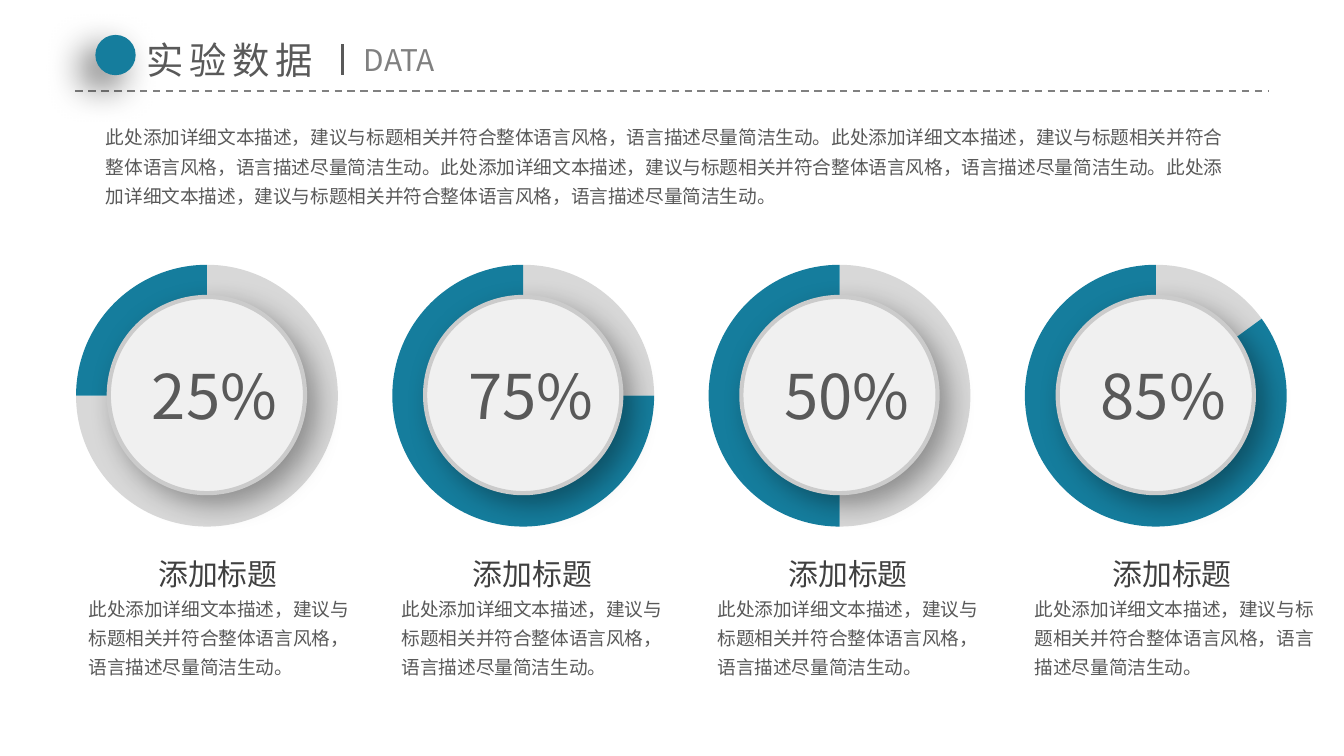
from lxml import etree
from pptx import Presentation
from pptx import util as u
from pptx.chart.data import CategoryChartData
from pptx.dml.color import RGBColor
from pptx.enum import chart as charts, dml, shapes, text
from pptx.oxml import parse_xml
from pptx.oxml.ns import nsdecls, qn

Inches, Pt = u.Inches, u.Pt
SENTENCE = "此处添加详细文本描述，建议与标题相关并符合整体语言风格，语言描述尽量简洁生动。"


def rgb(value):
    return RGBColor.from_string(value)


class Deck:
    font = "Noto Sans CJK SC"
    accent, track = "157D9D", "D8D8D8"
    heading, body, muted = "404040", "595959", "808080"

    def __init__(self, width, height):
        self.prs = Presentation()
        self.prs.slide_width, self.prs.slide_height = Inches(width), Inches(height)
        self.slide = self.prs.slides.add_slide(self.prs.slide_layouts[6])

    def line(self, x1, y1, x2, y2, color, weight, dash=None):
        rule = self.slide.shapes.add_connector(
            shapes.MSO_CONNECTOR.STRAIGHT, *map(Inches, (x1, y1, x2, y2)))
        rule.line.color.rgb = rgb(color)
        rule.line.width = Pt(weight)
        if dash:
            rule.line.dash_style = dash
        etree.SubElement(rule._element.spPr, qn("a:effectLst"))

    def circle(self, x, y, size, shadow):
        """Borderless disc; shadow is (opacity %, blur pt, distance pt, degrees)."""
        disc = self.slide.shapes.add_shape(
            shapes.MSO_SHAPE.OVAL, *map(Inches, (x, y, size, size)))
        disc.fill.solid()
        disc.fill.fore_color.rgb = rgb(self.accent)
        disc.line.fill.background()
        disc.shadow.inherit = False
        alpha, blur, distance, angle = shadow
        disc._element.spPr.find(qn("a:effectLst")).append(parse_xml(
            f'<a:outerShdw {nsdecls("a")} blurRad="{Pt(blur)}" dist="{Pt(distance)}" '
            f'dir="{angle * 60000}" algn="ctr" rotWithShape="0"><a:srgbClr val="000000">'
            f'<a:alpha val="{alpha * 1000}"/></a:srgbClr></a:outerShdw>'))
        return disc

    def text(self, x, y, w, h, words, size, color, wrap=True,
             inset=(0.1, 0.05), leading=None, spacing=None):
        box = self.slide.shapes.add_textbox(*map(Inches, (x, y, w, h)))
        frame = box.text_frame
        frame.word_wrap = wrap
        frame.auto_size = text.MSO_AUTO_SIZE.SHAPE_TO_FIT_TEXT
        frame.margin_left = frame.margin_right = Inches(inset[0])
        frame.margin_top = frame.margin_bottom = Inches(inset[1])
        paragraph = frame.paragraphs[0]
        paragraph.text = words
        if leading:
            paragraph.line_spacing = leading
        paragraph.font.size = Pt(size)
        paragraph.font.name = self.font
        paragraph.font.color.rgb = rgb(color)
        props = paragraph._p.pPr.find(qn("a:defRPr"))
        etree.SubElement(props, qn("a:ea")).set("typeface", self.font)
        if spacing:
            props.set("spc", str(spacing * 100))

    def pie(self, x, y, w, h, diameter, values):
        data = CategoryChartData()
        data.categories = ["1", "2"]
        data.add_series("Series 1", values)
        chart = self.slide.shapes.add_chart(
            charts.XL_CHART_TYPE.PIE, *map(Inches, (x, y, w, h)), data).chart
        chart.has_legend = chart.has_title = False
        chart.font.size = Pt(10)
        chart.font.name = self.font
        chart.font.color.rgb = rgb("000000")
        plot = chart.plots[0]
        plot.vary_by_categories = False
        for index, color in enumerate((self.track, self.accent)):
            slice_format = plot.series[0].points[index].format
            slice_format.fill.solid()
            slice_format.fill.fore_color.rgb = rgb(color)
            slice_format.line.fill.background()
        self.fix_plot_size(chart, diameter / w, diameter / h)

    def fix_plot_size(self, chart, width, height):
        """Centre the plot at the given fractions of the chart's size."""
        area = chart._chartSpace.chart.plotArea
        for old in area.findall(qn("c:layout")):
            area.remove(old)
        area.insert(0, parse_xml(
            f'<c:layout {nsdecls("c")}><c:manualLayout><c:layoutTarget val="inner"/>'
            '<c:xMode val="edge"/><c:yMode val="edge"/>'
            f'<c:x val="{(1 - width) / 2:.3f}"/><c:y val="{(1 - height) / 2:.3f}"/>'
            f'<c:w val="{width:.3f}"/><c:h val="{height:.3f}"/>'
            '</c:manualLayout></c:layout>'))

    def gauge(self, x, percent):
        self.pie(x, 1.83, 2.8, 2.23, 1.95, (100 - percent, percent))
        hub = self.circle(x + 0.67, 2.21, 1.46, (35, 15, 7, 45))
        hub.fill.gradient()
        hub.fill.gradient_angle = 315
        for stop, color in zip(hub.fill.gradient_stops, ("F0F0F0", "F1F1F1")):
            stop.color.rgb = rgb(color)
        hub.line.color.rgb = rgb("CBCBCB")
        hub.line.width = Pt(2.25)
        self.text(x + 0.92, 2.62, 1.11, 0.63, f"{percent}%", 33, self.body,
                  wrap=False, inset=(0.07, 0.04))

    def caption(self, title_x, x, width):
        self.text(x, 4.35, width, 0.76, SENTENCE, 10, self.body, leading=1.3)
        self.text(title_x, 4, 1.1, 0.4, "添加标题", 16, self.heading,
                  inset=(0.1, 0), leading=1.5)


def main():
    deck = Deck(10, 10 * 9 / 16)
    deck.line(0.56, 0.68, 9.44, 0.68, deck.muted, 1, dml.MSO_LINE.DASH)
    deck.circle(0.71, 0.26, 0.3, (60, 20, 10, 135))
    deck.text(0.99, 0.23, 1.49, 0.44, "实验数据", 20, deck.body, wrap=False, spacing=3)
    deck.text(2.61, 0.26, 0.73, 0.37, "DATA", 16, deck.muted, wrap=False)
    deck.line(2.55, 0.33, 2.55, 0.56, deck.body, 1.5)

    gauge_pitch = (7.2 - 0.14) / 3
    for column, percent in enumerate((25, 75, 50, 85)):
        deck.gauge(0.14 + column * gauge_pitch, percent)
    for title_x, x, width in ((1.08, 0.56, 2.15), (3.42, 2.89, 2.16),
                              (5.77, 5.24, 2.18), (8.18, 7.6, 2.28)):
        deck.caption(title_x, x, width)

    deck.text(0.69, 0.84, 8.62, 1.19, SENTENCE * 4, 10, deck.body, leading=1.3)
    deck.prs.save("out.pptx")


if __name__ == "__main__":
    main()
